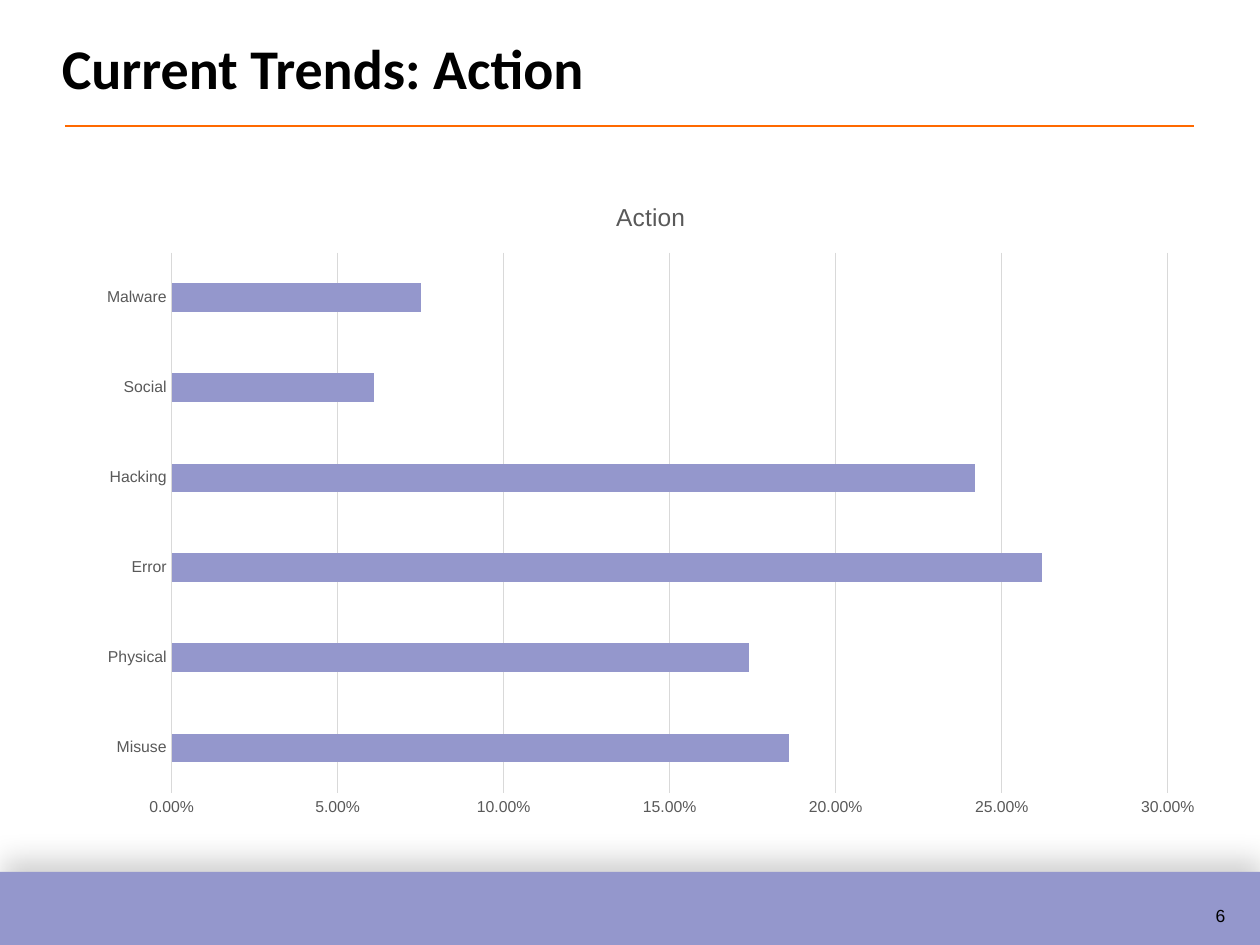
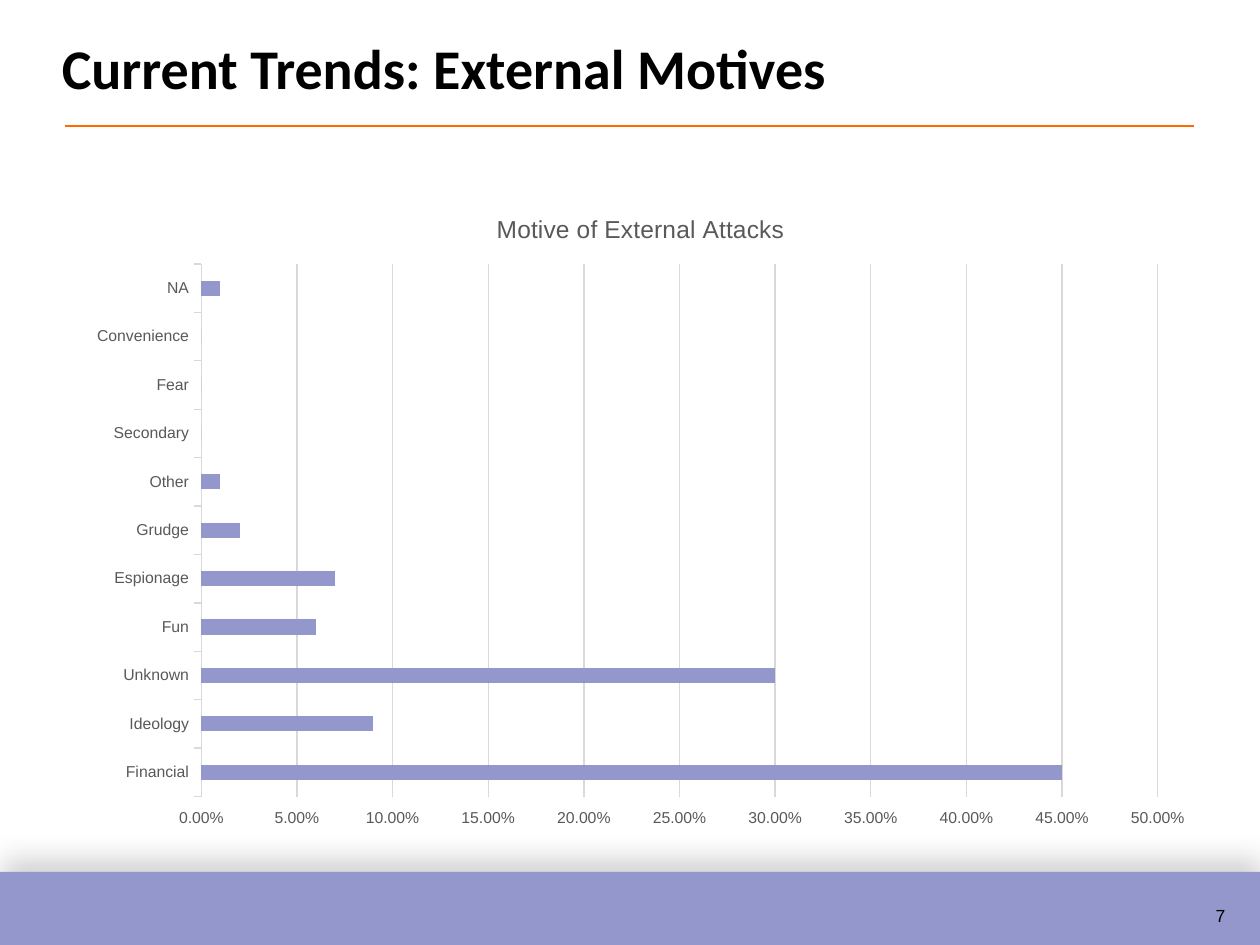
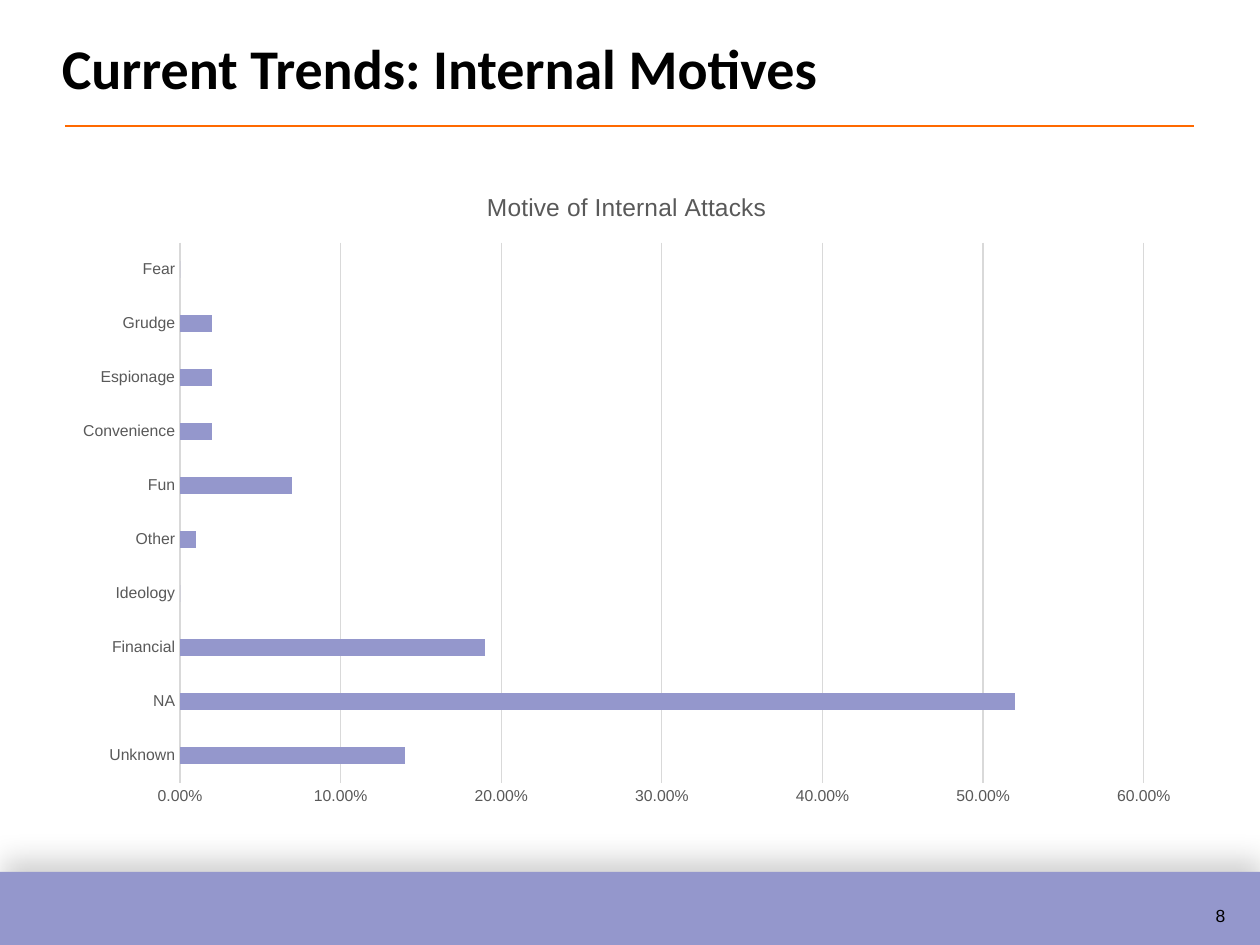
"""Build three slides of bar charts on current attack trends."""
from dataclasses import dataclass

from lxml import etree
from pptx import Presentation
from pptx.chart.data import CategoryChartData
from pptx.dml.color import RGBColor
from pptx.enum.chart import XL_CHART_TYPE, XL_TICK_MARK
from pptx.enum.shapes import MSO_CONNECTOR, MSO_SHAPE
from pptx.enum.text import MSO_ANCHOR, PP_ALIGN
from pptx.oxml import parse_xml
from pptx.oxml.ns import nsdecls, qn
from pptx.util import Inches, Pt

BAR_CLUSTERED = XL_CHART_TYPE.BAR_CLUSTERED
TICK_NONE = XL_TICK_MARK.NONE
TICK_OUTSIDE = XL_TICK_MARK.OUTSIDE
STRAIGHT = MSO_CONNECTOR.STRAIGHT
RECTANGLE = MSO_SHAPE.RECTANGLE
MIDDLE = MSO_ANCHOR.MIDDLE
LEFT = PP_ALIGN.LEFT

BAND_SHADOW = (
    f'<a:effectLst {nsdecls("a")}>'
    '<a:outerShdw blurRad="203200" dist="101600" dir="16620000" rotWithShape="0">'
    '<a:srgbClr val="000000"><a:alpha val="19000"/></a:srgbClr>'
    '</a:outerShdw></a:effectLst>'
)


@dataclass(frozen=True)
class Theme:
    """Colours, fonts and type sizes of the deck."""

    accent: RGBColor = RGBColor(0x94, 0x97, 0xCC)
    rule: RGBColor = RGBColor(0xFF, 0x69, 0x00)
    text: RGBColor = RGBColor(0, 0, 0)
    chart_text: RGBColor = RGBColor(0x59, 0x59, 0x59)
    grid: RGBColor = RGBColor(0xD9, 0xD9, 0xD9)
    heading_font: str = "Calibri"
    body_font: str = "Arial"
    title_size: Pt = Pt(32)
    chart_title_size: Pt = Pt(14)
    body_size: Pt = Pt(10)
    axis_size: Pt = Pt(9)
    rule_width: Pt = Pt(1)
    grid_width: Pt = Pt(0.75)


class Deck:
    """Hold the style and the current slide."""

    def __init__(self, theme):
        """Start an empty presentation."""
        self.theme = theme
        self.presentation = Presentation()
        self.presentation.slide_width = Inches(10)
        self.presentation.slide_height = Inches(7.5)
        self.slide = None

    def style_font(self, font, name, size, color, bold=False):
        """Set the face, size and colour of a font."""
        font.name, font.size, font.bold = name, size, bold
        font.color.rgb = color

    def style_line(self, line, color, width):
        """Set the colour and width of a line."""
        line.color.rgb = color
        line.width = width

    def add_slide(self, title, number):
        """Add a slide with its shared elements."""
        self.slide = self.presentation.slides.add_slide(self.presentation.slide_layouts[0])
        subtitle = self.slide.placeholders[1].element
        subtitle.getparent().remove(subtitle)
        self.add_band()
        self.add_page_number(number)
        self.add_rule()
        self.add_title(title)

    def add_band(self):
        """Add the shaded band at the foot."""
        band = self.slide.shapes.add_shape(
            RECTANGLE, Inches(0), Inches(6.92), Inches(10), Inches(0.58))
        band.fill.solid()
        band.fill.fore_color.rgb = self.theme.accent
        band.line.fill.background()
        band.element.spPr.append(parse_xml(BAND_SHADOW))

    def add_page_number(self, number):
        """Add the page number on the band."""
        box = self.slide.shapes.add_textbox(
            Inches(9.55), Inches(7.05), Inches(0.37), Inches(0.34))
        box.text_frame.word_wrap = False
        paragraph = box.text_frame.paragraphs[0]
        paragraph.text = str(number)
        paragraph.alignment = LEFT
        paragraph.line_spacing = 1.5
        self.style_font(paragraph.font, self.theme.body_font,
                        self.theme.body_size, self.theme.text)

    def add_rule(self):
        """Add the line under the title."""
        rule = self.slide.shapes.add_connector(
            STRAIGHT, Inches(0.52), Inches(1), Inches(9.48), Inches(1))
        self.style_line(rule.line, self.theme.rule, self.theme.rule_width)
        etree.SubElement(rule.element.spPr, qn("a:effectLst"))

    def add_title(self, text):
        """Fill and place the title."""
        title = self.slide.shapes.title
        title.left, title.top = Inches(0.39), Inches(0.21)
        title.width, title.height = Inches(9.15), Inches(0.64)
        title.text_frame.vertical_anchor = MIDDLE
        paragraph = title.text_frame.paragraphs[0]
        paragraph.text = text
        paragraph.alignment = LEFT
        self.style_font(paragraph.font, self.theme.heading_font,
                        self.theme.title_size, self.theme.text, bold=True)

    def add_bar_chart(self, title, shares, left, top, maximum, step, tick):
        """Add a bar chart of shares by category."""
        theme = self.theme
        data = CategoryChartData(number_format="0.00%")
        data.categories = list(shares)
        data.add_series("Series 1", list(shares.values()))
        chart = self.slide.shapes.add_chart(
            BAR_CLUSTERED, Inches(left), Inches(top), Inches(8.99), Inches(5.17), data).chart
        self.style_font(chart.font, theme.body_font, theme.body_size, theme.text)
        chart.has_legend = False
        chart.has_title = True
        paragraph = chart.chart_title.text_frame.paragraphs[0]
        paragraph.text = title
        self.style_font(paragraph.font, theme.body_font,
                        theme.chart_title_size, theme.chart_text)

        plot = chart.plots[0]
        plot.gap_width = 219
        plot.vary_by_categories = False
        series = plot.series[0]
        series.invert_if_negative = False
        series.format.fill.solid()
        series.format.fill.fore_color.rgb = theme.accent

        for axis in (chart.category_axis, chart.value_axis):
            axis.major_tick_mark = tick
            axis.minor_tick_mark = TICK_NONE
            self.style_font(axis.tick_labels.font, theme.body_font,
                            theme.axis_size, theme.chart_text)
        self.style_line(chart.category_axis.format.line, theme.grid, theme.grid_width)

        value_axis = chart.value_axis
        value_axis.format.line.fill.background()
        value_axis.has_major_gridlines = True
        self.style_line(value_axis.major_gridlines.format.line, theme.grid, theme.grid_width)
        value_axis.minimum_scale = 0
        value_axis.maximum_scale = maximum
        value_axis.major_unit = step
        value_axis.tick_labels.number_format = "0.00%"
        value_axis.tick_labels.number_format_is_linked = False


def main():
    """Build and save the deck."""
    deck = Deck(Theme())

    deck.add_slide("Current Trends: Action", 6)
    actions = {"Misuse": 0.186, "Physical": 0.174, "Error": 0.262,
               "Hacking": 0.242, "Social": 0.061, "Malware": 0.075}
    deck.add_bar_chart("Action", actions, 0.67, 1.41, 0.3, 0.05, TICK_NONE)

    deck.add_slide("Current Trends: External Motives", 7)
    external_motives = {
        "Financial": 0.45, "Ideology": 0.09, "Unknown": 0.3, "Fun": 0.06,
        "Espionage": 0.07, "Grudge": 0.02, "Other": 0.01, "Secondary": 0,
        "Fear": 0, "Convenience": 0, "NA": 0.01}
    deck.add_bar_chart("Motive of External Attacks", external_motives,
                       0.59, 1.5, 0.5, 0.05, TICK_OUTSIDE)

    deck.add_slide("Current Trends: Internal Motives", 8)
    internal_motives = {
        "Unknown": 0.14, "NA": 0.52, "Financial": 0.19, "Ideology": 0,
        "Other": 0.01, "Fun": 0.07, "Convenience": 0.02, "Espionage": 0.02,
        "Grudge": 0.02, "Fear": 0}
    deck.add_bar_chart("Motive of Internal Attacks", internal_motives,
                       0.48, 1.33, 0.6, 0.1, TICK_NONE)

    deck.presentation.save("out.pptx")


if __name__ == "__main__":
    main()
